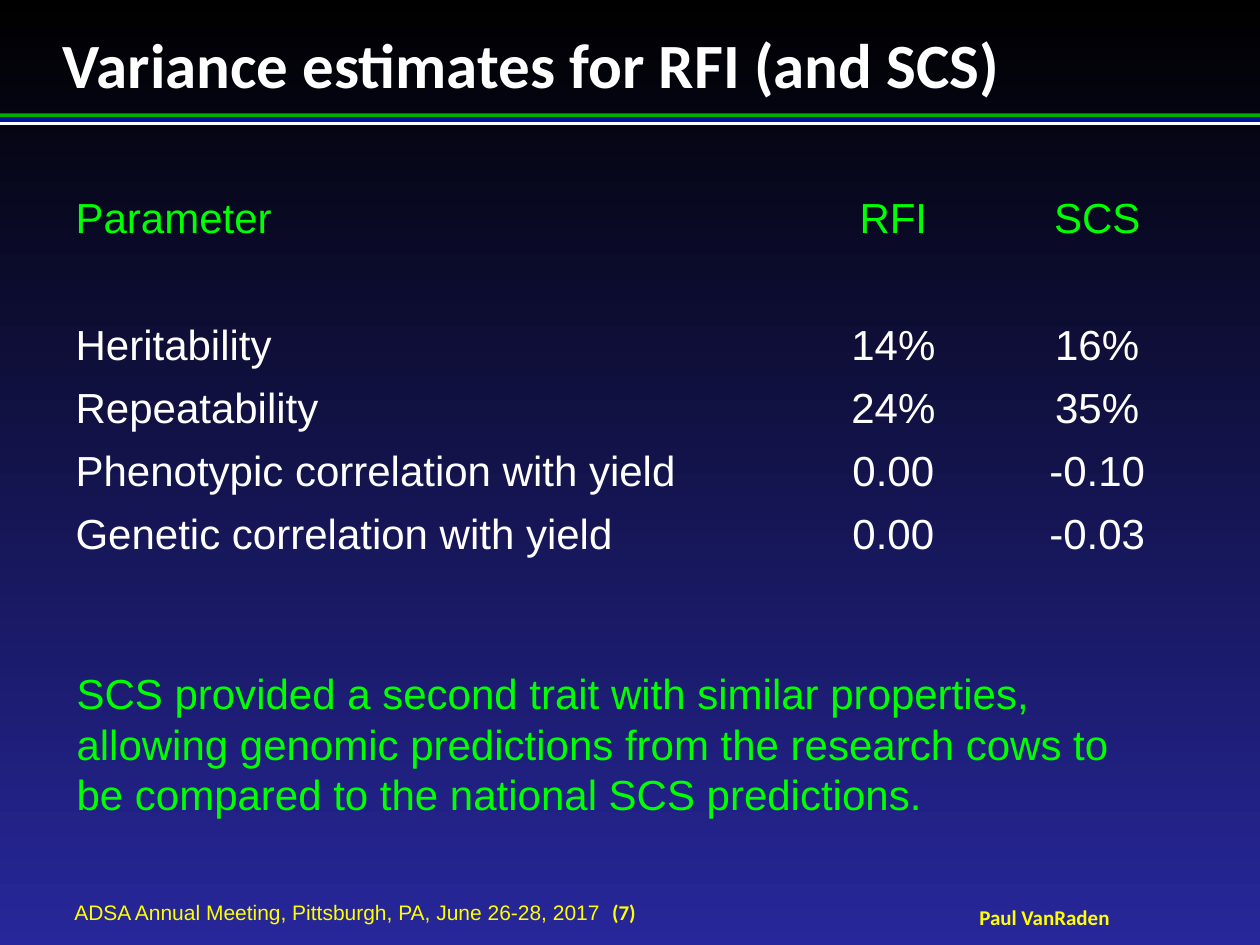
from pptx import Presentation
from pptx.dml.color import RGBColor
from pptx.enum import shapes, text
from pptx.util import Pt

COLORS = {
    "black": "000000", "navy": "27279B", "white": "FFFFFF", "yellow": "FFFF00",
    "lime": "00FF00", "bar_green": "01AF00", "bar_blue": "001799",
}
NO_GRID_STYLE = "{2D5ABB26-0587-4C30-8999-92F81FD0307C}"

TITLE = {"name": "Calibri", "size": Pt(36), "bold": True, "color": "white"}
BODY = {"name": "Arial", "size": Pt(24), "color": "white"}
ACCENT = {**BODY, "color": "lime"}
FOOTER = {"name": "Arial", "size": Pt(12), "color": "yellow"}
FOOTER_BOLD = {**FOOTER, "name": "Calibri", "bold": True}

ROWS = [
    ("Parameter", "RFI", "SCS"),
    ("", "", ""),
    ("Heritability", "14%", "16%"),
    ("Repeatability", "24%", "35%"),
    ("Phenotypic correlation with yield", "0.00", "-0.10"),
    ("Genetic correlation with yield", "0.00", "-0.03"),
]
COL_WIDTHS = (415, 119, 114)
ROW_HEIGHT, GAP_HEIGHT = 34, 36.4


def rgb(name):
    return RGBColor.from_string(COLORS[name])


def add_run(p, words, fmt):
    r = p.add_run()
    r.text = words
    for key, value in fmt.items():
        if key == "color":
            r.font.color.rgb = rgb(value)
        else:
            setattr(r.font, key, value)


def add_text(s, box, runs, align=text.PP_ALIGN.LEFT, **frame):
    """Add one paragraph of (words, format) runs; frame holds text frame settings."""
    tf = s.shapes.add_textbox(*map(Pt, box)).text_frame
    tf.word_wrap = True
    for key, value in frame.items():
        setattr(tf, key, value)
    p = tf.paragraphs[0]
    p.alignment = align
    for words, fmt in runs:
        add_run(p, words, fmt)


def set_background(s):
    fill = s.background.fill
    fill.gradient()
    fill.gradient_angle = 270
    for stop, color in zip(fill.gradient_stops, ("black", "navy")):
        stop.color.rgb = rgb(color)


def add_header(s, left, top, width):
    for dy, height, color in ((0, 2.3, "bar_green"), (4.5, 2, "white"),
                              (2.3, 2.6, "bar_blue")):
        box = (left, top + dy, width, height)
        sp = s.shapes.add_shape(shapes.MSO_SHAPE.RECTANGLE, *map(Pt, box))
        sp.shadow.inherit = False
        sp.fill.solid()
        sp.fill.fore_color.rgb = rgb(color)
        sp.line.fill.background()


def add_estimates(s, left, top):
    heights = [ROW_HEIGHT if row[0] else GAP_HEIGHT for row in ROWS]
    box = (left, top, sum(COL_WIDTHS), sum(heights))
    table = s.shapes.add_table(len(ROWS), len(COL_WIDTHS), *map(Pt, box)).table
    table.horz_banding = table.first_row = False
    table._tbl.tblPr[0].text = NO_GRID_STYLE
    for col, width in zip(table.columns, COL_WIDTHS):
        col.width = Pt(width)
    for i, (row, height) in enumerate(zip(ROWS, heights)):
        table.rows[i].height = Pt(height)
        for j, words in enumerate(row):
            cell = table.cell(i, j)
            cell.fill.background()
            if words:
                p = cell.text_frame.paragraphs[0]
                p.alignment = text.PP_ALIGN.CENTER if j else text.PP_ALIGN.LEFT
                add_run(p, words, BODY if i else ACCENT)


def main():
    prs = Presentation()
    prs.slide_width, prs.slide_height = Pt(720), Pt(540)
    s = prs.slides.add_slide(prs.slide_layouts[6])
    flush = dict.fromkeys(
        ("margin_left", "margin_top", "margin_right", "margin_bottom"), 0)
    footer = {**flush, "vertical_anchor": text.MSO_ANCHOR.MIDDLE}

    set_background(s)
    add_header(s, 0, 64.8, 720)
    add_text(s, (36, 14.4, 648, 43.2),
             [("Variance estimates for RFI (and SCS)", TITLE)], **flush)
    add_estimates(s, 36, 108)
    add_text(s, (36.7, 378, 612, 94.5), [(
        "SCS provided a second trait with similar properties, allowing genomic "
        "predictions from the research cows to be compared to the national SCS "
        "predictions.", ACCENT)])
    add_text(s, (42.5, 514.1, 489.6, 14.4),
             [("ADSA Annual Meeting, Pittsburgh, PA, June 26-28, 2017  ", FOOTER),
              ("(7)", FOOTER_BOLD)], **footer)
    add_text(s, (553.7, 517, 86.4, 14.4), [("Paul VanRaden", FOOTER_BOLD)],
             text.PP_ALIGN.CENTER, word_wrap=False, **footer)
    prs.save("out.pptx")


if __name__ == "__main__":
    main()
